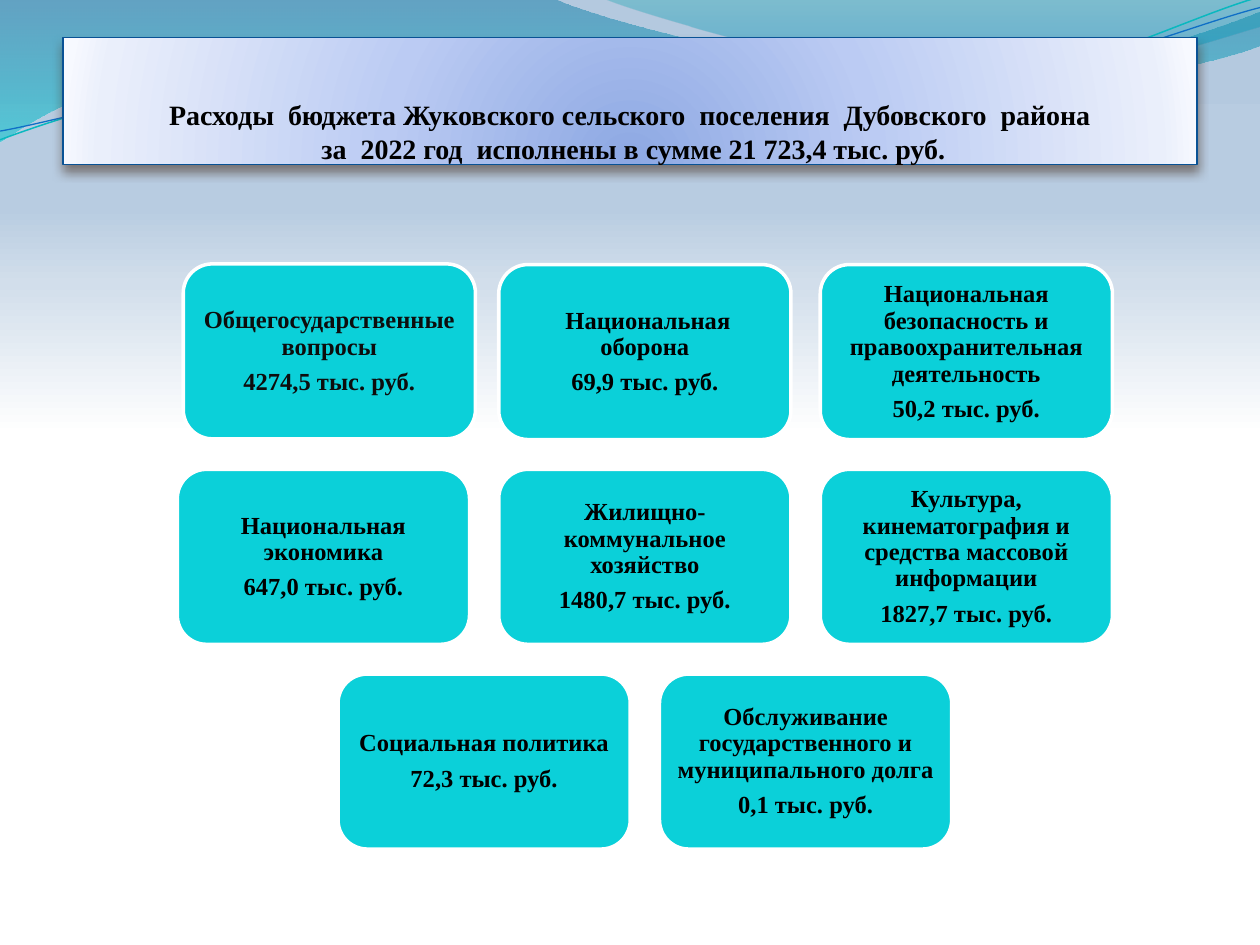
"""Build the slide on budget spending of a rural settlement."""
from dataclasses import dataclass

from lxml.etree import SubElement
from pptx import Presentation
from pptx.dml.color import RGBColor
from pptx.enum.shapes import MSO_SHAPE
from pptx.enum.text import MSO_ANCHOR, PP_ALIGN
from pptx.oxml.ns import qn
from pptx.util import Pt


@dataclass(frozen=True)
class Theme:
    """Colours, type sizes and gradients of the deck."""
    font: str = "Times New Roman"
    title_size: int = 16
    tile_size: int = 14
    ink: str = "000000"
    soft_ink: str = "0D0D0D"
    tile: str = "0BD0D9"
    tile_edge: str = "FFFFFF"
    title_edge: str = "095295"
    shadow: str = "4E3B30"
    wave_teal: str = "0AB8BF"
    wave_blue: str = "0F6FC6"
    sky: tuple = ((0, "B4C9DF", 100), (22, "B8CCE1", 100), (30, "D2DEEB", 100),
                  (46, "FFFFFF", 100), (100, "FFFFFF", 100))
    left_swoosh: tuple = ((0, "0074A1", 45), (100, "00C6CF", 55))
    right_swoosh: tuple = ((0, "00A1A9", 30), (80, "008BBF", 45))
    banner: tuple = ((0, "8DA8E3", 100), (43, "BBCBF3", 100),
                     (93, "EAEFFB", 100), (100, "F7F9FF", 100))


LEFT_SWOOSH = [
    (0, 0), (316.8, -0.7),
    (342.7, 12.2, 478.1, 45.4, 545.8, 45.4), (614.2, 45.4, 689.8, 18.7, 720, 6.5),
    (720.7, 25.9), (707.8, 31.7, 626.4, 54.7, 537.1, 54),
    (447.8, 54, 275, 20.2, 185, 24.5), (92.9, 25.9, 33.1, 59.8, -0.7, 81.4), (0, 0)]
RIGHT_SWOOSH = [
    (344.9, -0.7), (366.5, 8.6, 491, 44.6, 553.7, 46.8),
    (616.3, 49.7, 691.9, 23, 720, 15.1), (720, 0), (344.9, -0.7)]
TEAL_WAVE = [
    (0, 79.9), (34.6, 67, 113.8, 41, 199.4, 37.4),
    (284.4, 33.8, 427, 64.1, 513.4, 57.6), (599.8, 51.1, 675.4, 10.8, 718.6, -1.4)]
BLUE_WAVE = [
    (0, 74.9), (33.8, 69.1, 118.1, 43.9, 203.8, 40.3),
    (290.2, 36.7, 429.8, 60.5, 516.2, 54), (601.9, 48.2, 677.5, 15.1, 720, 4.3)]

TITLE = ("Расходы  бюджета Жуковского сельского  поселения  Дубовского  района\v"
         " за  2022 год  исполнены в сумме 21 723,4 тыс. руб.")
SPENDING = [
    [("Общегосударственные вопросы", "4274,5"),
     (" Национальная оборона", "69,9"),
     ("Национальная безопасность и правоохранительная деятельность", "50,2")],
    [("Национальная экономика", "647,0"),
     ("Жилищно-коммунальное хозяйство", "1480,7"),
     ("Культура, кинематография и средства массовой информации", "1827,7")],
    [("Социальная политика", "72,3"),
     ("Обслуживание государственного и муниципального долга", "0,1")],
]
TILE_WIDTH, TILE_HEIGHT, TILE_INSET = 167, 100, 4.8
COLUMN_STEP, ROW_STEP = 183.7, 117
GRID_CENTRE, GRID_TOP = 368.5, 151.2
FIRST_TILE_SHIFT = (3.4, -0.4)


def bend(form, segments):
    """Join each three lines that hold control points into one cubic curve."""
    lines = iter(list(form.element.iter(qn("a:lnTo"))))
    for segment in segments[1:]:
        group = [next(lines) for _ in range(len(segment) // 2)]
        if len(group) == 3:
            group[0].tag = qn("a:cubicBezTo")
            for line in group[1:]:
                group[0].append(line[0])
                line.getparent().remove(line)


def add_colour(parent, colour, opacity):
    """Add a colour with its opacity in percent."""
    element = SubElement(parent, qn("a:srgbClr"), val=colour)
    if opacity < 100:
        SubElement(element, qn("a:alpha"), val=str(opacity * 1000))


def set_gradient(fill, owner, stops, focus=None):
    """Fill with a downward gradient, or a round one when a focus is given."""
    fill.gradient()
    gradient = next(owner.iter(qn("a:gradFill")))
    for child in list(gradient):
        gradient.remove(child)
    stop_list = SubElement(gradient, qn("a:gsLst"))
    for position, colour, opacity in stops:
        stop = SubElement(stop_list, qn("a:gs"), pos=str(position * 1000))
        add_colour(stop, colour, opacity)
    if focus:
        circle = SubElement(gradient, qn("a:path"), path="circle")
        SubElement(circle, qn("a:fillToRect"),
                   {side: str(value * 1000) for side, value in zip("ltrb", focus)})
    else:
        SubElement(gradient, qn("a:lin"), ang="5400000", scaled="0")


def set_line(shape, colour, width):
    """Give a shape a solid outline."""
    shape.line.color.rgb = RGBColor.from_string(colour)
    shape.line.width = Pt(width)


def write_text(shape, text, *, font, size, colour, anchor=MSO_ANCHOR.MIDDLE,
               margins=(0, 0, 0, 0), line_spacing=1.0, space_after=0):
    """Write bold centred paragraphs, one for each line of the text."""
    frame = shape.text_frame
    frame.word_wrap = True
    frame.vertical_anchor = anchor
    (frame.margin_left, frame.margin_top,
     frame.margin_right, frame.margin_bottom) = map(Pt, margins)
    frame.text = text
    for para in frame.paragraphs:
        para.alignment = PP_ALIGN.CENTER
        para.line_spacing = line_spacing
        para.space_after = Pt(space_after)
        for span in para.runs:
            span.font.name = font
            span.font.size = Pt(size)
            span.font.bold = True
            span.font.color.rgb = RGBColor.from_string(colour)


class SlideBuilder:
    """Hold the theme and the current page, and draw elements on it."""

    def __init__(self, page, theme):
        """Keep the page and paint its background."""
        self.page, self.theme = page, theme
        set_gradient(page.background.fill, page.element, theme.sky)

    def shape(self, kind, left, top, width, height):
        """Add a preset shape without a shadow."""
        box = self.page.shapes.add_shape(kind, *map(Pt, (left, top, width, height)))
        box.shadow.inherit = False
        return box

    def outline(self, segments, close):
        """Add a curved freeform without a shadow."""
        points = [(Pt(segment[i]), Pt(segment[i + 1]))
                  for segment in segments for i in range(0, len(segment), 2)]
        builder = self.page.shapes.build_freeform(*points[0])
        builder.add_line_segments(points[1:], close=close)
        form = builder.convert_to_shape()
        bend(form, segments)
        form.shadow.inherit = False
        return form

    def swoosh(self, segments, stops):
        """Add a translucent filled band."""
        form = self.outline(segments, close=True)
        set_gradient(form.fill, form.element, stops)
        form.line.fill.background()

    def wave(self, segments, colour, width):
        """Add a thin open curve."""
        form = self.outline(segments, close=False)
        form.fill.background()
        set_line(form, colour, width)

    def banner(self, text):
        """Add the title box with its round gradient and soft shadow."""
        theme = self.theme
        box = self.shape(MSO_SHAPE.RECTANGLE, 36, 21.6, 648, 72.5)
        set_gradient(box.fill, box.element, theme.banner, focus=(50, 130, 50, -30))
        set_line(box, theme.title_edge, 0.75)
        effects = next(box.element.iter(qn("a:effectLst")))
        shadow = SubElement(effects, qn("a:outerShdw"), blurRad=str(Pt(6)),
                            dist=str(Pt(4)), dir="5400000", rotWithShape="0")
        add_colour(shadow, theme.shadow, 60)
        write_text(box, text, font=theme.font, size=theme.title_size, colour=theme.ink,
                   anchor=MSO_ANCHOR.BOTTOM, margins=(0, 3.6, 0, 0))

    def tile(self, text, left, top, colour):
        """Add a rounded tile and the label inside it."""
        theme = self.theme
        box = self.shape(MSO_SHAPE.FLOWCHART_ALTERNATE_PROCESS,
                         left, top, TILE_WIDTH, TILE_HEIGHT)
        box.fill.solid()
        box.fill.fore_color.rgb = RGBColor.from_string(theme.tile)
        set_line(box, theme.tile_edge, 2)
        label = self.page.shapes.add_textbox(*map(Pt, (
            left + TILE_INSET, top + TILE_INSET,
            TILE_WIDTH - 2 * TILE_INSET, TILE_HEIGHT - 2 * TILE_INSET)))
        write_text(label, text, font=theme.font, size=theme.tile_size, colour=colour,
                   margins=(4.2,) * 4, line_spacing=0.9, space_after=4.9)


def main():
    """Build and save the deck."""
    deck = Presentation()
    deck.slide_width, deck.slide_height = Pt(720), Pt(540)
    theme = Theme()
    builder = SlideBuilder(deck.slides.add_slide(deck.slide_layouts[6]), theme)
    builder.swoosh(LEFT_SWOOSH, theme.left_swoosh)
    builder.swoosh(RIGHT_SWOOSH, theme.right_swoosh)
    builder.wave(TEAL_WAVE, theme.wave_teal, 0.85)
    builder.wave(BLUE_WAVE, theme.wave_blue, 0.75)
    builder.banner(TITLE)
    for row, items in enumerate(SPENDING):
        row_left = GRID_CENTRE - ((len(items) - 1) * COLUMN_STEP + TILE_WIDTH) / 2
        for column, (name, amount) in enumerate(items):
            first = row == column == 0
            shift_x, shift_y = FIRST_TILE_SHIFT if first else (0, 0)
            builder.tile(f"{name}\n{amount} тыс. руб.",
                         row_left + column * COLUMN_STEP + shift_x,
                         GRID_TOP + row * ROW_STEP + shift_y,
                         theme.soft_ink if first else theme.ink)
    deck.save("out.pptx")


if __name__ == "__main__":
    main()
